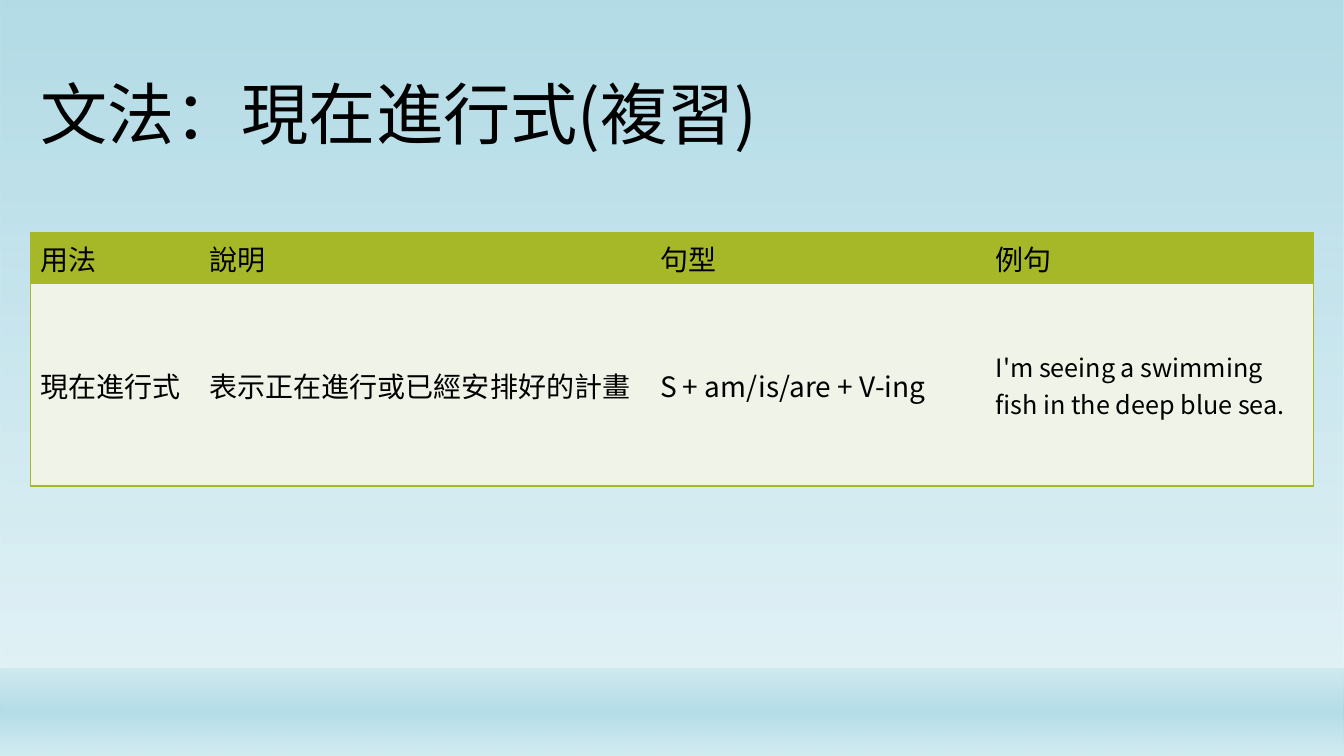
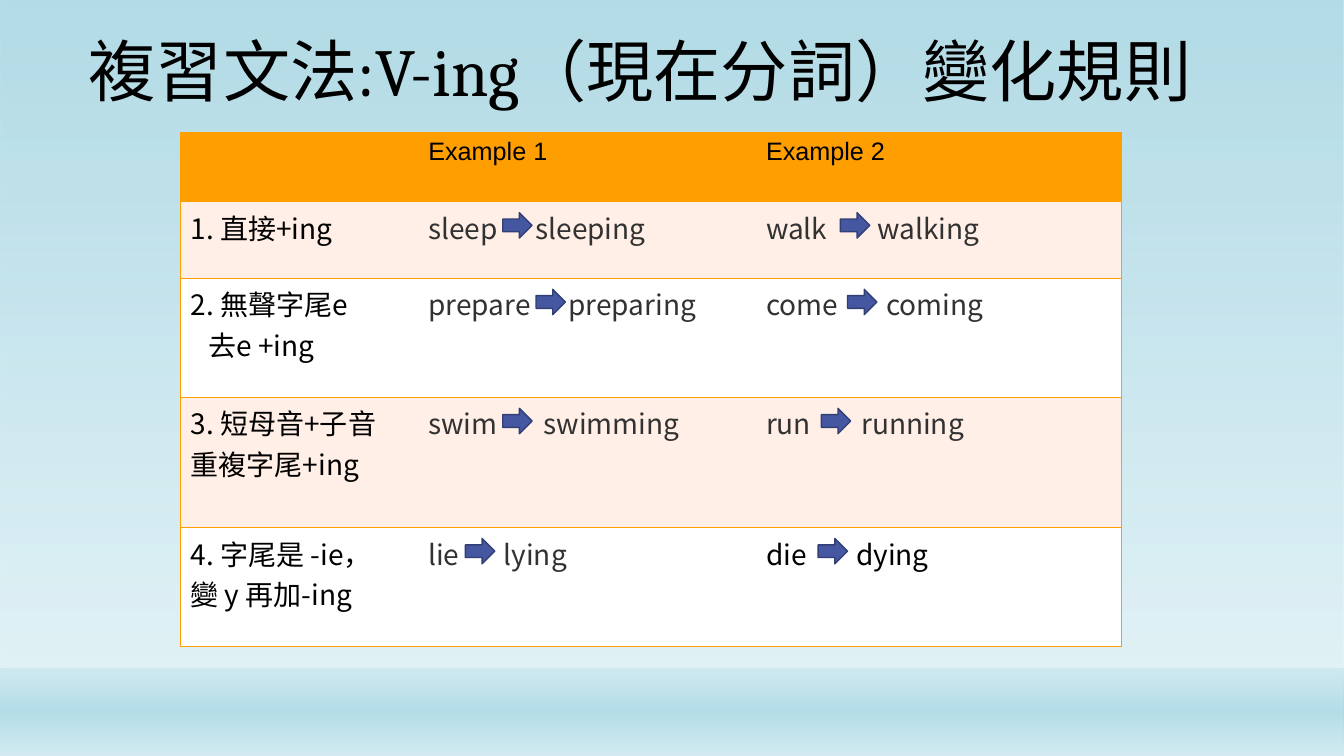
from itertools import accumulate

from lxml import etree
from pptx import Presentation
from pptx.dml.color import RGBColor
from pptx.enum.shapes import MSO_SHAPE as Shape
from pptx.enum.text import MSO_ANCHOR as Anchor, MSO_AUTO_SIZE as AutoSize, PP_ALIGN as Align
from pptx.oxml import parse_xml
from pptx.oxml.ns import nsdecls, qn
from pptx.util import Cm, Pt

BLACK = RGBColor(0x00, 0x00, 0x00)
GREY = RGBColor(0x32, 0x32, 0x32)
WHITE = RGBColor(0xFF, 0xFF, 0xFF)
SKY = RGBColor(0x7C, 0xC2, 0xD5)
PALE_SKY = RGBColor(0xD2, 0xEB, 0xF1)
GREEN = RGBColor(0xA6, 0xB7, 0x27)
PALE_GREEN = RGBColor(0xF0, 0xF3, 0xE7)
ORANGE = RGBColor(0xFE, 0x9E, 0x00)
PALE_ORANGE = RGBColor(0xFF, 0xEF, 0xE6)
ARROW_FILL = RGBColor(0x45, 0x57, 0xA1)
ARROW_LINE = RGBColor(0x32, 0x3F, 0x75)

CJK = "Noto Sans CJK TC"
NO_STYLE = "{2D5ABB26-0587-4C30-8999-92F81FD0307C}"
WIDTH, HEIGHT = 33.87, 19.05
BAND_TOP = 16.84
CELL_INSET = 0.25
ARROW_SIZE = (0.74, 0.64)
ARROW_DROP = 0.28  # from the top of the row

# Gradient stops: position in %, colour, opacity in %
SKY_STOPS = [(0, SKY, 58), (88, PALE_SKY, 65), (100, PALE_SKY, 65)]
BAND_STOPS = [(0, SKY, 38), (1, SKY, 38), (49, SKY, 100), (100, PALE_SKY, 89)]

USAGE_TITLE = "文法：現在進行式(複習)"
USAGE_COLUMNS = [("用法", 4.27), ("說明", 11.35), ("句型", 8.46), ("例句", 8.26)]
USAGE_ROWS = [1.25, 5.1]
USAGE = [
    ("現在進行式", 20),
    ("表示正在進行或已經安排好的計畫", 20),
    ("S + am/is/are + V-ing", 20),
    ("I'm seeing a swimming fish in the deep blue sea.", 18),
]

RULES_TITLE = "複習文法:V-ing（現在分詞）變化規則"
RULES_LEFT, RULES_TOP = 4.55, 3.35
RULES_COLUMNS = [("", 5.99), ("Example 1", 8.51), ("Example 2", 9.22)]
RULES_HEADER_HEIGHT = 1.73
# Row height, rule, indent of its second line, and the examples:
# verb, form with -ing, start of the arrow, start of the form, colour
RULES = [
    (1.93, "1. 直接+ing", 0, [
        ("sleep", "sleeping", 1.88, 2.7, GREY),
        ("walk", "walking", 1.88, 2.8, GREY)]),
    (3, "2. 無聲字尾e\n去e +ing", 0.45, [
        ("prepare", "preparing", 2.72, 3.53, GREY),
        ("come", "coming", 2.06, 3.03, GREY)]),
    (3.28, "3. 短母音+子音\n重複字尾+ing", 0, [
        ("swim", "swimming", 1.88, 2.9, GREY),
        ("run", "running", 1.4, 2.4, GREY)]),
    (3, "4. 字尾是 -ie，\n變 y 再加-ing", 0, [
        ("lie", "lying", 0.94, 1.9, GREY),
        ("die", "dying", 1.32, 2.27, BLACK)]),
]


def set_font(paragraph, size, name=CJK, color=BLACK):
    font = paragraph.font
    font.size, font.name, font.bold = Pt(size), name, False
    font.color.rgb = color
    east_asian = etree.SubElement(font._element, qn("a:ea"))
    east_asian.set("typeface", CJK)


def add_master_panel(slide, top, height, stops):
    """Draw a full-width gradient panel and move it to the slide master."""
    panel = slide.shapes.add_shape(Shape.RECTANGLE, 0, Cm(top), Cm(WIDTH), Cm(height))
    panel.shadow.inherit = False
    panel.line.fill.background()
    stop_xml = "".join(
        f'<a:gs pos="{position * 1000}"><a:srgbClr val="{color}">'
        f'<a:alpha val="{opacity * 1000}"/></a:srgbClr></a:gs>'
        for position, color, opacity in stops)
    gradient = parse_xml(
        f'<a:gradFill {nsdecls("a")} rotWithShape="1"><a:gsLst>{stop_xml}</a:gsLst>'
        '<a:lin ang="5400000" scaled="0"/></a:gradFill>')
    panel._element.spPr.find(qn("a:prstGeom")).addnext(gradient)
    master_tree = slide.slide_layout.slide_master.shapes._spTree
    first_placeholder = master_tree.find(qn("p:sp"))
    first_placeholder.addprevious(panel._element)


def add_title(slide, text, box, anchor, font_name, line_spacing):
    title = slide.shapes.title
    title.left, title.top, title.width, title.height = map(Cm, box)
    frame = title.text_frame
    frame.text = text
    frame.word_wrap, frame.auto_size = True, AutoSize.NONE
    frame.vertical_anchor = anchor
    paragraph = frame.paragraphs[0]
    paragraph.alignment, paragraph.line_spacing = Align.LEFT, line_spacing
    set_font(paragraph, 48, font_name)


def add_table(slide, left, top, columns, heights):
    """Add an unstyled table with the given column headings, widths and row heights."""
    widths = [width for _, width in columns]
    frame = slide.shapes.add_table(
        len(heights), len(widths), Cm(left), Cm(top), Cm(sum(widths)), Cm(sum(heights)))
    table = frame.table
    table.first_row = table.horz_banding = False
    table._tbl.tblPr.find(qn("a:tableStyleId")).text = NO_STYLE
    for column, width in zip(table.columns, widths):
        column.width = Cm(width)
    for row, height in zip(table.rows, heights):
        row.height = Cm(height)
    for cell, (heading, _) in zip(table.rows[0].cells, columns):
        cell.text = heading
    return table


def paint_table(table, line_color, row_fills):
    """Fill the rows and rule every edge except the inner vertical ones."""
    last = len(table.columns) - 1
    for row, fill in zip(table.rows, row_fills):
        for index, cell in enumerate(row.cells):
            sides = ["L"] * (index == 0) + ["R"] * (index == last) + ["T", "B"]
            for side in sides:
                cell._tc.get_or_add_tcPr().append(parse_xml(
                    f'<a:ln{side} {nsdecls("a")} w="12700"><a:solidFill>'
                    f'<a:srgbClr val="{line_color}"/></a:solidFill></a:ln{side}>'))
            cell.fill.solid()
            cell.fill.fore_color.rgb = fill


def add_arrow(slide, left, top):
    arrow = slide.shapes.add_shape(
        Shape.RIGHT_ARROW, Cm(left), Cm(top), *map(Cm, ARROW_SIZE))
    arrow.shadow.inherit = False
    arrow.fill.solid()
    arrow.fill.fore_color.rgb = ARROW_FILL
    arrow.line.color.rgb = ARROW_LINE
    arrow.line.width = Pt(1)


def add_usage_slide(slide):
    add_title(slide, USAGE_TITLE, (0.76, 0.99, 26.42, 3.02), Anchor.BOTTOM, CJK, 0.9)
    table = add_table(slide, 0.76, 5.87, USAGE_COLUMNS, USAGE_ROWS)
    for column, (text, size) in enumerate(USAGE):
        heading, body = table.cell(0, column), table.cell(1, column)
        body.text = text
        for cell, cell_size in ((heading, 20), (body, size)):
            cell.vertical_anchor = Anchor.MIDDLE
            set_font(cell.text_frame.paragraphs[0], cell_size)
    paint_table(table, GREEN, [GREEN, PALE_GREEN])


def fill_example(cell, verb, form, form_start, color):
    cell.text = f"{verb}\t{form}"
    paragraph = cell.text_frame.paragraphs[0]
    tabs = etree.SubElement(paragraph._p.get_or_add_pPr(), qn("a:tabLst"))
    etree.SubElement(tabs, qn("a:tab"), pos=str(Cm(form_start)), algn="l")
    set_font(paragraph, 20, color=color)


def add_rules_slide(slide):
    add_title(slide, RULES_TITLE, (1.98, 0.61, 29.29, 2.31), Anchor.TOP, "Cambria", 1.0)
    heights = [RULES_HEADER_HEIGHT] + [rule[0] for rule in RULES]
    table = add_table(slide, RULES_LEFT, RULES_TOP, RULES_COLUMNS, heights)
    for cell in table.rows[0].cells:
        set_font(cell.text_frame.paragraphs[0], 18, "Arial")

    lefts = list(accumulate((width for _, width in RULES_COLUMNS), initial=RULES_LEFT))
    tops = list(accumulate(heights, initial=RULES_TOP))
    for row, (_, rule, indent, examples) in enumerate(RULES, start=1):
        rule_cell = table.cell(row, 0)
        rule_cell.text = rule
        for number, paragraph in enumerate(rule_cell.text_frame.paragraphs):
            paragraph._p.get_or_add_pPr().set("marL", str(Cm(indent * number)))
            set_font(paragraph, 20)
        for column, (verb, form, arrow_start, form_start, color) in enumerate(examples, start=1):
            fill_example(table.cell(row, column), verb, form, form_start, color)
            add_arrow(slide, lefts[column] + CELL_INSET + arrow_start, tops[row] + ARROW_DROP)
    paint_table(table, ORANGE, [ORANGE] + [PALE_ORANGE, WHITE] * 2)


def main():
    presentation = Presentation()
    presentation.slide_width, presentation.slide_height = Cm(WIDTH), Cm(HEIGHT)
    title_only = presentation.slide_layouts[5]
    usage_slide, rules_slide = (presentation.slides.add_slide(title_only) for _ in range(2))
    add_master_panel(usage_slide, 0, HEIGHT, SKY_STOPS)
    add_master_panel(usage_slide, BAND_TOP, HEIGHT - BAND_TOP, BAND_STOPS)
    add_usage_slide(usage_slide)
    add_rules_slide(rules_slide)
    presentation.save("out.pptx")


if __name__ == "__main__":
    main()
